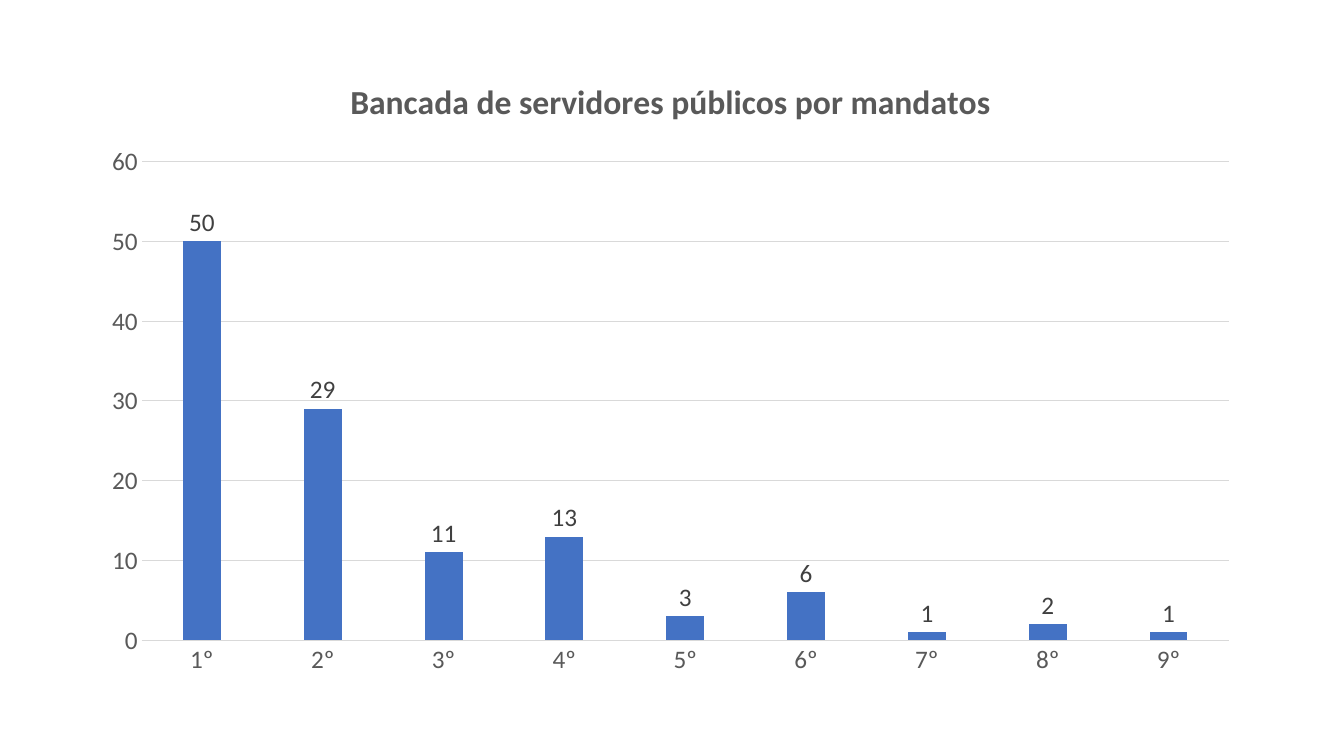
import pptx
import pptx.chart.data
import pptx.dml.color
import pptx.enum.chart
import pptx.util


class SlideBuilder:
    """Holds the style and the current slide."""

    FONT = "Calibri"
    COLORS = {"bar": "4472C4", "text": "595959", "label": "404040", "line": "D9D9D9"}

    def __init__(self, slide):
        self.slide = slide

    def color(self, name):
        return pptx.dml.color.RGBColor.from_string(self.COLORS[name])

    def style_font(self, font, size, color, bold=False):
        font.name = self.FONT
        font.size = pptx.util.Pt(size)
        font.bold = bold
        font.color.rgb = self.color(color)

    def style_line(self, line):
        line.color.rgb = self.color("line")
        line.width = pptx.util.Pt(0.75)

    def style_axis(self, axis):
        axis.major_tick_mark = pptx.enum.chart.XL_TICK_MARK.NONE
        axis.minor_tick_mark = pptx.enum.chart.XL_TICK_MARK.NONE
        self.style_font(axis.tick_labels.font, 18, "text")

    def column_chart(self, title, categories, values, left, top, width, height):
        data = pptx.chart.data.CategoryChartData()
        data.categories = categories
        data.add_series("Series 1", values)
        box = [pptx.util.Inches(length) for length in (left, top, width, height)]
        chart = self.slide.shapes.add_chart(
            pptx.enum.chart.XL_CHART_TYPE.COLUMN_CLUSTERED, *box, data
        ).chart
        self.style_font(chart.font, 18, "text")
        chart.has_legend = False

        chart.has_title = True
        chart.chart_title.include_in_layout = False
        heading = chart.chart_title.text_frame
        heading.text = title
        self.style_font(heading.paragraphs[0].runs[0].font, 24, "text", bold=True)

        mandates, members = chart.category_axis, chart.value_axis
        self.style_axis(mandates)
        self.style_line(mandates.format.line)
        self.style_axis(members)
        members.format.line.fill.background()
        members.minimum_scale, members.maximum_scale, members.major_unit = 0, 60, 10
        members.has_major_gridlines = True
        self.style_line(members.major_gridlines.format.line)

        plot = chart.plots[0]
        plot.vary_by_categories = False
        plot.gap_width = 219
        plot.overlap = -27
        bars = plot.series[0]
        bars.format.fill.solid()
        bars.format.fill.fore_color.rgb = self.color("bar")
        labels = bars.data_labels
        labels.show_value = True
        labels.position = pptx.enum.chart.XL_LABEL_POSITION.OUTSIDE_END
        self.style_font(labels.font, 18, "label")


def main():
    deck = pptx.Presentation()
    deck.slide_width = pptx.util.Inches(13.33)
    deck.slide_height = pptx.util.Inches(7.5)
    builder = SlideBuilder(deck.slides.add_slide(deck.slide_layouts[6]))
    builder.column_chart(
        "Bancada de servidores públicos por mandatos",
        [f"{mandate}º" for mandate in range(1, 10)],
        [50, 29, 11, 13, 3, 6, 1, 2, 1],
        0.88, 0.54, 11.54, 6.28,
    )
    deck.save("out.pptx")


if __name__ == "__main__":
    main()
